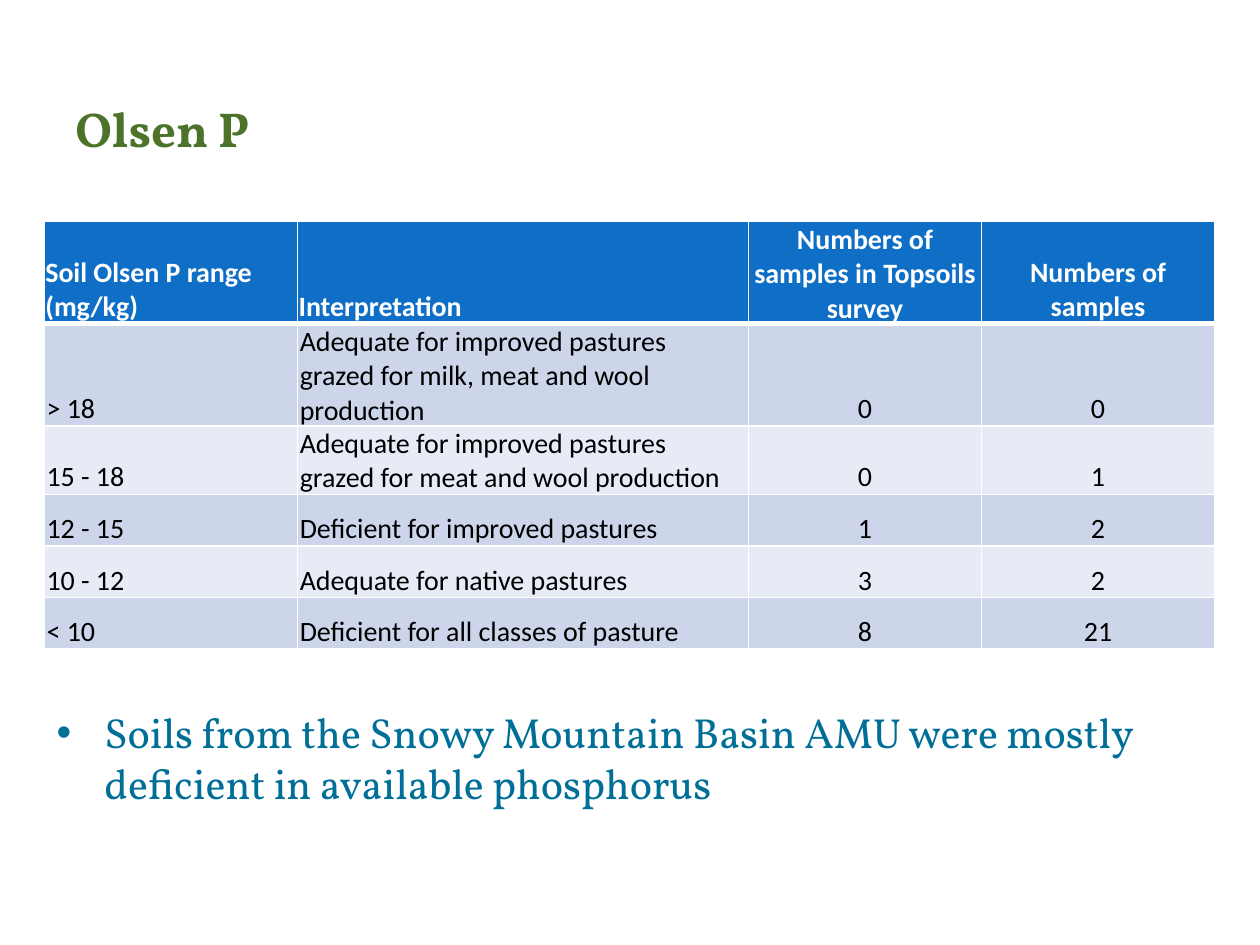
from dataclasses import dataclass

from lxml import etree
from pptx import Presentation
from pptx.dml.color import RGBColor
from pptx.enum.text import MSO_ANCHOR, PP_ALIGN
from pptx.oxml.ns import qn
from pptx.util import Inches, Pt

LEFT, CENTER = PP_ALIGN.LEFT, PP_ALIGN.CENTER
TOP, MIDDLE, BOTTOM = MSO_ANCHOR.TOP, MSO_ANCHOR.MIDDLE, MSO_ANCHOR.BOTTOM


@dataclass(frozen=True)
class Theme:
    title_color: str = "4C7329"
    body_color: str = "006F97"
    header_fill: str = "0F6FC6"
    header_text: str = "FFFFFF"
    cell_text: str = "000000"
    bands: tuple = ("CCD5EA", "E7EBF5")
    border: str = "FFFFFF"
    text_font: str = "Vollkorn"
    table_font: str = "Calibri"
    title_size: int = 28
    body_size: int = 24
    table_size: int = 16
    thin: int = 1
    thick: int = 3


@dataclass(frozen=True)
class Box:
    left: float
    top: float
    width: float
    height: float

    def lengths(self) -> list:
        return [Inches(v) for v in (self.left, self.top, self.width, self.height)]


@dataclass(frozen=True)
class Column:
    heading: str
    width: float
    align: PP_ALIGN


@dataclass(frozen=True)
class OlsenRange:
    label: str
    interpretation: str
    survey_samples: int
    samples: int

    def texts(self) -> list:
        return [self.label, self.interpretation, str(self.survey_samples), str(self.samples)]


THEME = Theme()
ROW_HEIGHT = 0.41
COLUMNS = [
    Column("Soil Olsen P range (mg/kg)", 2.01, LEFT),
    Column("Interpretation", 3.58, LEFT),
    Column("Numbers of samples in Topsoils survey", 1.85, CENTER),
    Column("Numbers of samples", 1.85, CENTER),
]
RANGES = [
    OlsenRange("> 18", "Adequate for improved pastures grazed for milk, meat and wool production", 0, 0),
    OlsenRange("15 - 18", "Adequate for improved pastures grazed for meat and wool production", 0, 1),
    OlsenRange("12 - 15", "Deficient for improved pastures", 1, 2),
    OlsenRange("10 - 12", "Adequate for native pastures", 3, 2),
    OlsenRange("< 10", "Deficient for all classes of pasture", 8, 21),
]


def style_font(paragraph, name: str, size: int, color: str, bold: bool = False) -> None:
    font = paragraph.font
    font.name, font.size, font.bold = name, Pt(size), bold
    font.color.rgb = RGBColor.from_string(color)


def add_text(slide, box: Box, text: str, anchor: MSO_ANCHOR):
    frame = slide.shapes.add_textbox(*box.lengths()).text_frame
    frame.word_wrap = True
    frame.vertical_anchor = anchor
    frame.text = text
    return frame.paragraphs[0]


def add_bullet(paragraph, indent: float) -> None:
    properties = paragraph._p.get_or_add_pPr()
    properties.set("marL", str(Inches(indent)))
    properties.set("indent", str(-Inches(indent)))
    etree.SubElement(properties, qn("a:buFont"), typeface="Arial")
    etree.SubElement(properties, qn("a:buChar"), char="•")


def set_borders(cell, top: int, bottom: int) -> None:
    properties = cell._tc.get_or_add_tcPr()
    widths = {"a:lnL": THEME.thin, "a:lnR": THEME.thin, "a:lnT": top, "a:lnB": bottom}
    for side, width in widths.items():
        line = etree.SubElement(properties, qn(side), w=str(Pt(width)))
        fill = etree.SubElement(line, qn("a:solidFill"))
        etree.SubElement(fill, qn("a:srgbClr"), val=THEME.border)


def fill_cell(cell, text: str, align: PP_ALIGN, row: int) -> None:
    header = row == 0
    cell.text = text
    cell.vertical_anchor = BOTTOM
    cell.margin_left = cell.margin_right = Inches(0.01 if header else 0.02)
    cell.margin_top, cell.margin_bottom = Inches(0.01), Inches(0)
    set_borders(cell,
                top=THEME.thick if row == 1 else THEME.thin,
                bottom=THEME.thick if header else THEME.thin)
    cell.fill.solid()
    fill = THEME.header_fill if header else THEME.bands[(row - 1) % 2]
    cell.fill.fore_color.rgb = RGBColor.from_string(fill)
    paragraph = cell.text_frame.paragraphs[0]
    paragraph.alignment = align
    color = THEME.header_text if header else THEME.cell_text
    style_font(paragraph, THEME.table_font, THEME.table_size, color, bold=header)


def add_olsen_table(slide, left: float, top: float) -> None:
    rows = [[column.heading for column in COLUMNS]] + [entry.texts() for entry in RANGES]
    box = Box(left, top, sum(column.width for column in COLUMNS), ROW_HEIGHT * len(rows))
    table = slide.shapes.add_table(len(rows), len(COLUMNS), *box.lengths()).table
    for index, column in enumerate(COLUMNS):
        table.columns[index].width = Inches(column.width)
    for row, texts in enumerate(rows):
        table.rows[row].height = Inches(ROW_HEIGHT)
        for index, text in enumerate(texts):
            fill_cell(table.cell(row, index), text, COLUMNS[index].align, row)


def main() -> None:
    presentation = Presentation()
    presentation.slide_width, presentation.slide_height = Inches(10), Inches(7.5)
    slide = presentation.slides.add_slide(presentation.slide_layouts[6])

    # Title
    title = add_text(slide, Box(0.5, 0.48, 9, 1.07), "Olsen P", MIDDLE)
    style_font(title, THEME.text_font, THEME.title_size, THEME.title_color, bold=True)

    # Phosphorus ranges and sample counts
    add_olsen_table(slide, 0.35, 1.76)

    # Conclusion
    conclusion = add_text(
        slide, Box(0.35, 5.56, 9.29, 1.01),
        "Soils from the Snowy Mountain Basin AMU were mostly deficient in available phosphorus", TOP)
    add_bullet(conclusion, 0.38)
    style_font(conclusion, THEME.text_font, THEME.body_size, THEME.body_color)

    presentation.save("out.pptx")


if __name__ == "__main__":
    main()
